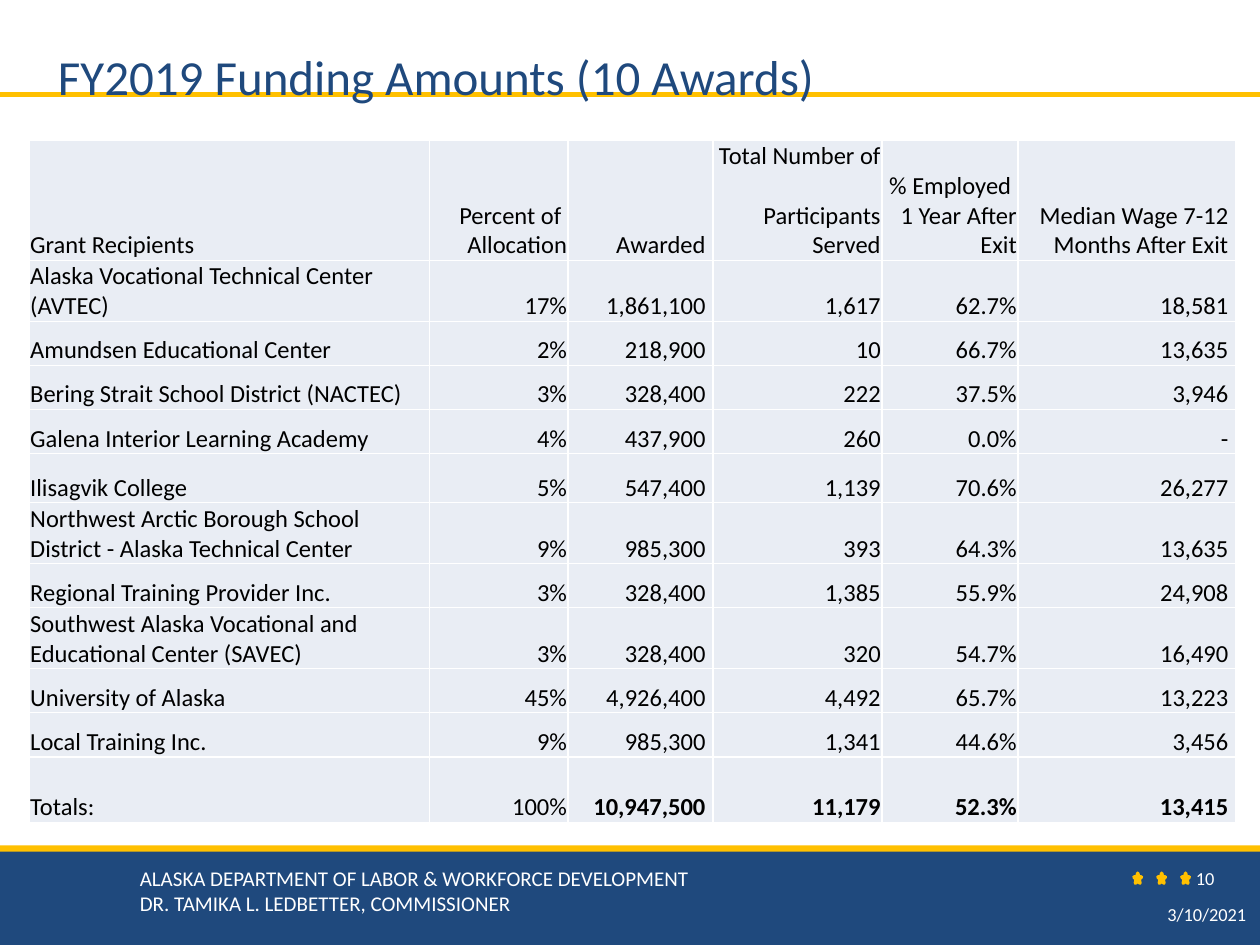
from lxml import etree
from pptx import Presentation
from pptx.dml import color as dml
from pptx.enum import shapes, text
from pptx.oxml import ns
from pptx.util import Inches, Pt

NAVY, GOLD, WHITE, BLACK, PALE = "1F497D", "FFC000", "FFFFFF", "000000", "E9EDF4"
LEFT, CENTER, RIGHT = text.PP_ALIGN.LEFT, text.PP_ALIGN.CENTER, text.PP_ALIGN.RIGHT
MIDDLE, TOP, BOTTOM = text.MSO_ANCHOR.MIDDLE, text.MSO_ANCHOR.TOP, text.MSO_ANCHOR.BOTTOM

COLUMN_WIDTHS = [3.18, 1.1, 1.15, 1.34, 1.08, 1.73]
ROW_HEIGHTS = [0.95, 0.48, 0.35, 0.35, 0.35, 0.39, 0.48, 0.35, 0.48, 0.35, 0.35, 0.52]
PADDED_COLUMNS = (2, 5)
HEADERS = [
    ["Grant Recipients"],
    ["Percent of ", "Allocation"],
    ["Awarded"],
    ["Total Number of", "Participants Served"],
    ["% Employed ", "1 Year After Exit"],
    ["Median Wage 7-12 Months After Exit"],
]
AWARDS = [
    ("Alaska Vocational Technical Center (AVTEC)", "17%", "1,861,100", "1,617", "62.7%", "18,581"),
    ("Amundsen Educational Center", "2%", "218,900", "10", "66.7%", "13,635"),
    ("Bering Strait School District (NACTEC)", "3%", "328,400", "222", "37.5%", "3,946"),
    ("Galena Interior Learning Academy", "4%", "437,900", "260", "0.0%", "-"),
    ("Ilisagvik College", "5%", "547,400", "1,139", "70.6%", "26,277"),
    ("Northwest Arctic Borough School District - Alaska Technical Center",
     "9%", "985,300", "393", "64.3%", "13,635"),
    ("Regional Training Provider Inc.", "3%", "328,400", "1,385", "55.9%", "24,908"),
    ("Southwest Alaska Vocational and Educational Center (SAVEC)",
     "3%", "328,400", "320", "54.7%", "16,490"),
    ("University of Alaska", "45%", "4,926,400", "4,492", "65.7%", "13,223"),
    ("Local Training Inc.", "9%", "985,300", "1,341", "44.6%", "3,456"),
    ("Totals:", "100%", "10,947,500", "11,179", "52.3%", "13,415"),
]


def rgb(value):
    return dml.RGBColor.from_string(value)


def place(shape, left, top, width, height):
    shape.left, shape.top = Inches(left), Inches(top)
    shape.width, shape.height = Inches(width), Inches(height)


def add_run(paragraph, words, size, color, bold=False):
    run = paragraph.add_run()
    run.text = words
    run.font.name = "Calibri"
    run.font.size = Pt(size)
    run.font.bold = bold
    run.font.color.rgb = rgb(color)


def write_lines(frame, lines, size, color, align=LEFT):
    for index, line in enumerate(lines):
        paragraph = frame.add_paragraph() if index else frame.paragraphs[0]
        paragraph.alignment = align
        add_run(paragraph, line, size, color)


def add_shape(slide, kind, box, fill, line_width=0):
    shape = slide.shapes.add_shape(kind, *map(Inches, box))
    shape.shadow.inherit = False
    shape.fill.solid()
    shape.fill.fore_color.rgb = rgb(fill)
    if line_width:
        shape.line.color.rgb = rgb(fill)
        shape.line.width = Pt(line_width)
    else:
        shape.line.fill.background()


def add_rule(slide, top):
    rule = slide.shapes.add_connector(
        shapes.MSO_CONNECTOR.STRAIGHT, 0, Inches(top), Inches(10), Inches(top))
    rule.line.color.rgb = rgb(GOLD)
    rule.line.width = Pt(3)
    etree.SubElement(rule._element.spPr, ns.qn("a:effectLst"))


def add_label(slide, box, lines, size, align=LEFT, anchor=TOP, inset=0.0):
    frame = slide.shapes.add_textbox(*map(Inches, box)).text_frame
    frame.word_wrap = True
    frame.vertical_anchor = anchor
    frame.margin_left = frame.margin_right = Inches(inset)
    frame.margin_top = frame.margin_bottom = Inches(inset / 2)
    write_lines(frame, lines, size, WHITE, align)


def add_title(slide, words):
    title = slide.shapes.title
    place(title, 0.36, 0.31, 7.75, 0.59)
    title.text_frame.vertical_anchor = MIDDLE
    write_lines(title.text_frame, [words], 28, NAVY)
    slide.shapes._spTree.append(title._element)


def add_borders(cell):
    properties = cell._tc.get_or_add_tcPr()
    for side in ("a:lnL", "a:lnR", "a:lnT", "a:lnB"):
        line = etree.SubElement(properties, ns.qn(side), w=str(Pt(1)))
        fill = etree.SubElement(line, ns.qn("a:solidFill"))
        etree.SubElement(fill, ns.qn("a:srgbClr"), val=WHITE)


def format_cell(cell, column):
    add_borders(cell)
    cell.fill.solid()
    cell.fill.fore_color.rgb = rgb(PALE)
    cell.vertical_anchor = BOTTOM
    cell.margin_left = cell.margin_top = Inches(0.01)
    cell.margin_right = Inches(0.06 if column in PADDED_COLUMNS else 0.01)
    cell.margin_bottom = 0


def add_awards_table(slide):
    rows = [HEADERS] + [[[value] for value in award] for award in AWARDS]
    frame = slide.shapes.add_table(
        len(rows), len(HEADERS), Inches(0.23), Inches(1.11),
        Inches(sum(COLUMN_WIDTHS)), Inches(sum(ROW_HEIGHTS)))
    table = frame.table
    table.first_row = table.horz_banding = False
    for column, width in zip(table.columns, COLUMN_WIDTHS):
        column.width = Inches(width)
    for row, height in zip(table.rows, ROW_HEIGHTS):
        row.height = Inches(height)
    for row_index, row in enumerate(rows):
        for column_index, lines in enumerate(row):
            cell = table.cell(row_index, column_index)
            format_cell(cell, column_index)
            align = RIGHT if column_index else LEFT
            write_lines(cell.text_frame, lines, 14, BLACK, align)
    for column_index in range(2, len(HEADERS)):
        total = table.cell(len(rows) - 1, column_index)
        total.text_frame.paragraphs[0].runs[0].font.bold = True
    table.cell(0, 3).text_frame.paragraphs[1].space_before = Pt(17)


def add_footer(slide):
    rectangle, star = shapes.MSO_SHAPE.RECTANGLE, shapes.MSO_SHAPE.STAR_5_POINT
    add_shape(slide, rectangle, (0, 6.74, 10, 0.76), NAVY)
    add_shape(slide, rectangle, (0, 6.71, 10, 0.05), GOLD)
    for index in range(3):
        add_shape(slide, star, (9 + 0.19 * index, 6.93, 0.06, 0.08), GOLD, 2)
    add_label(slide, (8.16, 7.13, 1.83, 0.25), ["3/10/2021"], 10.5, RIGHT, MIDDLE, 0.1)
    add_label(slide, (1.11, 6.87, 5.72, 0.4),
              ["ALASKA DEPARTMENT OF LABOR & WORKFORCE DEVELOPMENT",
               "DR. TAMIKA L. LEDBETTER, COMMISSIONER"], 12)
    add_label(slide, (9.13, 6.88, 0.87, 0.18), ["10"], 10.5, CENTER)


def main():
    presentation = Presentation()
    presentation.slide_width, presentation.slide_height = Inches(10), Inches(7.5)
    slide = presentation.slides.add_slide(presentation.slide_layouts[5])
    add_rule(slide, 0.75)
    add_footer(slide)
    add_title(slide, "FY2019 Funding Amounts (10 Awards)")
    add_awards_table(slide)
    presentation.save("out.pptx")


if __name__ == "__main__":
    main()
